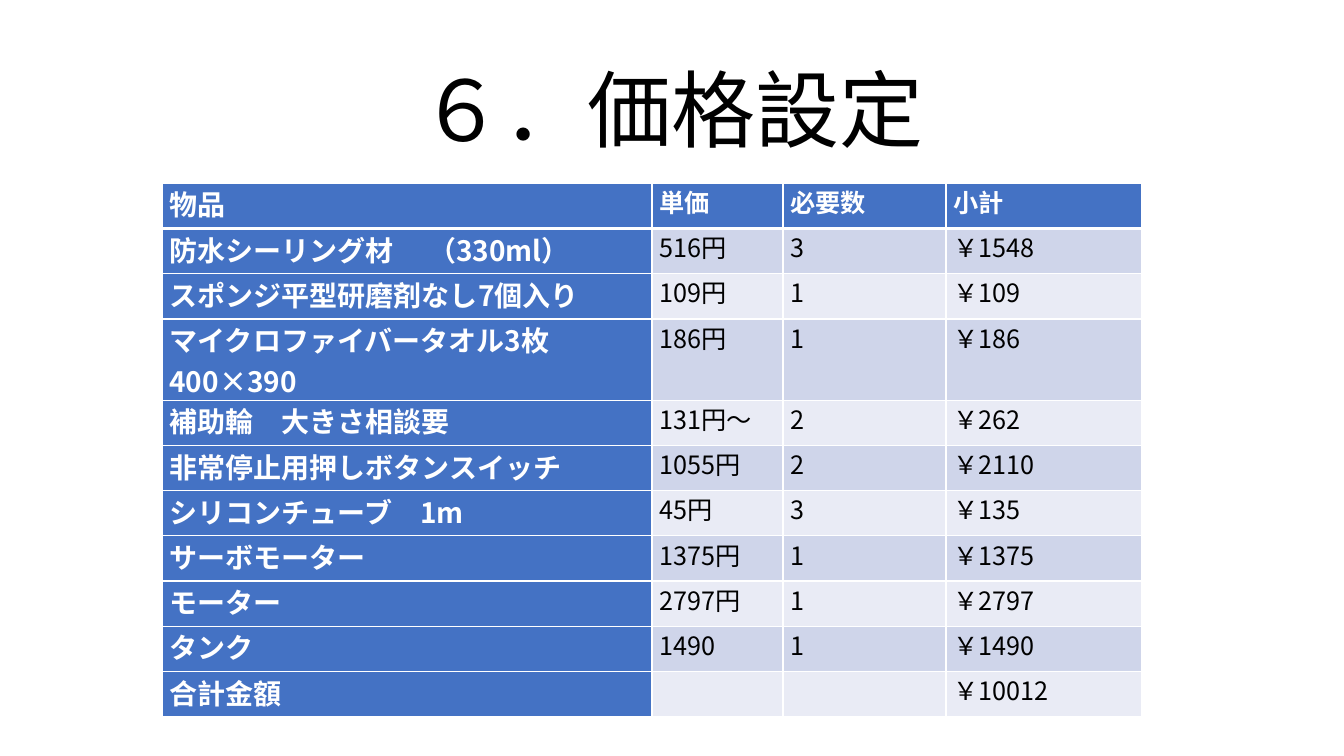
import pptx
import pptx.util
import pptx.dml.color
import pptx.enum.text
from lxml import etree
from pptx.oxml.ns import qn

Cm = pptx.util.Cm
Pt = pptx.util.Pt
RGBColor = pptx.dml.color.RGBColor
Align = pptx.enum.text.PP_ALIGN
Anchor = pptx.enum.text.MSO_ANCHOR

BLACK = RGBColor(0x00, 0x00, 0x00)
WHITE = RGBColor(0xFF, 0xFF, 0xFF)
BLUE = RGBColor(0x44, 0x72, 0xC4)
BANDS = (RGBColor(0xCF, 0xD5, 0xEA), RGBColor(0xE9, 0xEB, 0xF5))
FONT = "Noto Sans CJK JP"

WIDTHS = (12.34, 3.3, 4.11, 4.93)
ROW = 1.14
TALL = 1.63
TALL_ROW = 3
PRICES = (
    ("物品", "単価", "必要数", "小計"),
    ("防水シーリング材 　（330ml）", "516円", "3", "￥1548"),
    ("スポンジ平型研磨剤なし7個入り", "109円", "1", "￥109"),
    ("マイクロファイバータオル3枚400×390", "186円", "1", "￥186"),
    ("補助輪　大きさ相談要", "131円～", "2", "￥262"),
    ("非常停止用押しボタンスイッチ", "1055円", "2", "￥2110"),
    ("シリコンチューブ　1m", "45円", "3", "￥135"),
    ("サーボモーター", "1375円", "1", "￥1375"),
    ("モーター", "2797円", "1", "￥2797"),
    ("タンク", "1490", "1", "￥1490"),
    ("合計金額", "", "", "￥10012"),
)


def write(frame, text, size=18, color=BLACK, bold=False, align=Align.LEFT, space=1.0):
    """Put one formatted paragraph into a text frame."""
    para = frame.paragraphs[0]
    para.alignment = align
    para.line_spacing = space
    if not text:
        para.font.size = Pt(size)
        return
    run = para.add_run()
    run.text = text
    font = run.font
    font.size = Pt(size)
    font.bold = bold
    font.color.rgb = color
    font.name = FONT
    # East Asian glyphs take their typeface from a:ea
    east = etree.SubElement(run._r.get_or_add_rPr(), qn("a:ea"))
    east.set("typeface", FONT)


def border(cell, **widths):
    """Draw white cell borders; widths in points are keyed L, R, T, B."""
    props = cell._tc.get_or_add_tcPr()
    for side, width in widths.items():
        line = etree.SubElement(props, qn("a:ln" + side), w=str(Pt(width)))
        fill = etree.SubElement(line, qn("a:solidFill"))
        etree.SubElement(fill, qn("a:srgbClr"), val=str(WHITE))


class Deck:
    def __init__(self):
        self.file = pptx.Presentation()
        self.file.slide_width = Cm(33.87)
        self.file.slide_height = Cm(19.05)
        self.slide = self.file.slides.add_slide(self.file.slide_layouts[0])
        sub = self.slide.placeholders[1].element
        sub.getparent().remove(sub)

    def title(self, text, left, top, width, height):
        shape = self.slide.shapes.title
        shape.left, shape.top = Cm(left), Cm(top)
        shape.width, shape.height = Cm(width), Cm(height)
        frame = shape.text_frame
        frame.word_wrap = True
        frame.auto_size = pptx.enum.text.MSO_AUTO_SIZE.NONE
        frame.vertical_anchor = Anchor.BOTTOM
        write(frame, text, size=60, align=Align.CENTER, space=0.9)

    def table(self, rows, left, top):
        heights = [TALL if r == TALL_ROW else ROW for r in range(len(rows))]
        shape = self.slide.shapes.add_table(
            len(rows), len(WIDTHS), Cm(left), Cm(top),
            Cm(sum(WIDTHS)), Cm(sum(heights)))
        grid = shape.table
        grid.first_col = True
        for col, width in zip(grid.columns, WIDTHS):
            col.width = Cm(width)
        for row, height in zip(grid.rows, heights):
            row.height = Cm(height)
        for r, texts in enumerate(rows):
            for c, text in enumerate(texts):
                self.cell(grid.cell(r, c), text, r, c)

    def cell(self, cell, text, r, c):
        head = r == 0 or c == 0
        cell.margin_left = cell.margin_right = Cm(0.18)
        cell.margin_top = cell.margin_bottom = 0
        border(cell, L=1, R=1, T=3 if r == 1 else 1, B=3 if r == 0 else 1)
        cell.fill.solid()
        cell.fill.fore_color.rgb = BLUE if head else BANDS[(r - 1) % 2]
        write(cell.text_frame, text, size=18 if c else 20,
              color=WHITE if head else BLACK, bold=head,
              align=Align.JUSTIFY if c else Align.LEFT)


def main():
    deck = Deck()
    deck.title("６．価格設定", 4.23, 0.71, 25.4, 3.43)
    deck.table(PRICES, 4.09, 4.62)
    deck.file.save("out.pptx")


if __name__ == "__main__":
    main()
